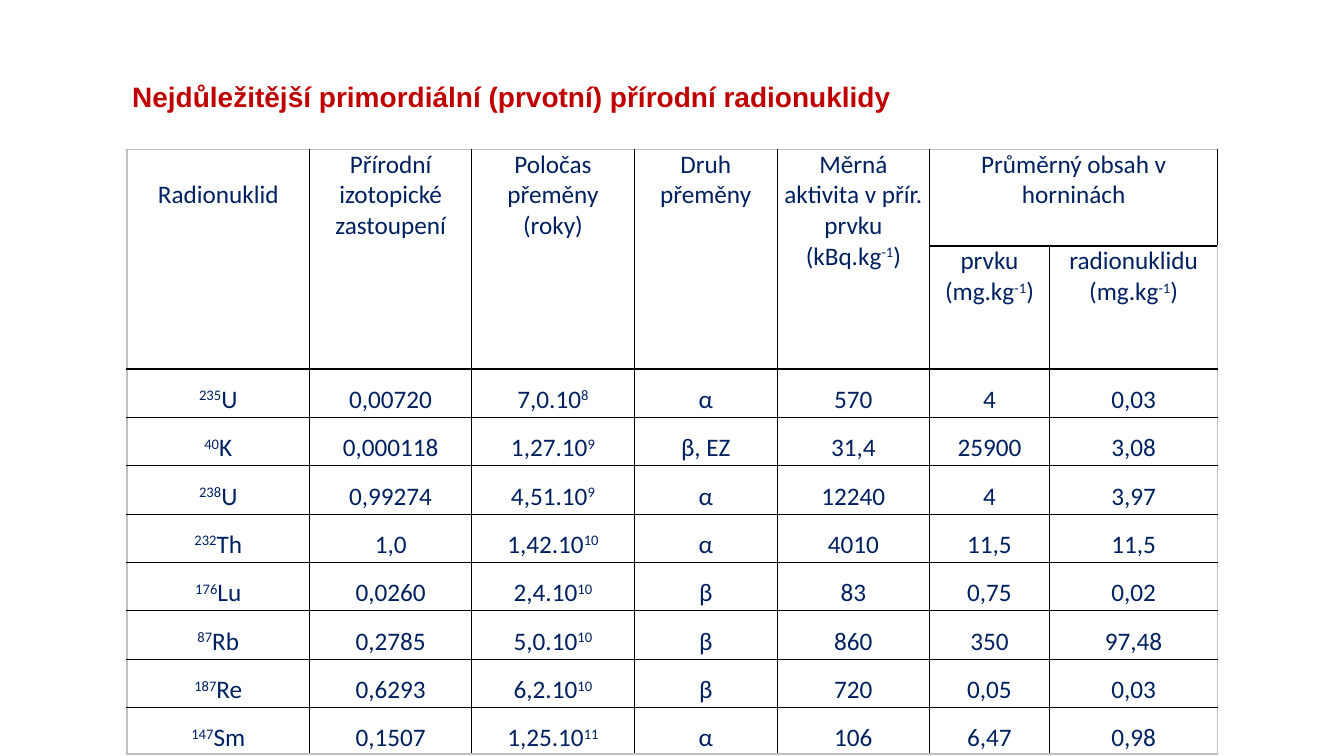
from typing import NamedTuple

from lxml import etree
from pptx import Presentation, util as u
from pptx.dml.color import RGBColor
from pptx.enum import text
from pptx.oxml.ns import qn

COLORS = {"title": "C00000", "body": "002060", "grid": "000000", "frame": "C0C0C0"}
COL_WIDTHS = [1.81, 1.61, 1.61, 1.42, 1.51, 1.19, 1.67]
ROW_HEIGHTS = [0.96, 0.64] + [0.48] * 7 + [0.46]


class Header(NamedTuple):
    row: int
    col: int
    label: str
    rows: int = 1
    cols: int = 1
    top: float = 0


class Nuclide(NamedTuple):
    symbol: str
    abundance: str
    half_life: str
    decay: str
    activity: str
    element: str
    nuclide: str


# Text between bars is superscript
HEADERS = [
    Header(0, 0, "Radionuklid", rows=2, top=0.3),
    Header(0, 1, "Přírodní izotopické zastoupení", rows=2),
    Header(0, 2, "Poločas přeměny (roky)", rows=2),
    Header(0, 3, "Druh přeměny", rows=2),
    Header(0, 4, "Měrná aktivita v přír. prvku (kBq.kg|-1|)", rows=2),
    Header(0, 5, "Průměrný obsah v horninách", cols=2),
    Header(1, 5, "prvku (mg.kg|-1|)"),
    Header(1, 6, "radionuklidu (mg.kg|-1|)"),
]
NUCLIDES = [
    Nuclide("|235|U", "0,00720", "7,0.10|8|", "α", "570", "4", "0,03"),
    Nuclide("|40|K", "0,000118", "1,27.10|9|", "β, EZ", "31,4", "25900", "3,08"),
    Nuclide("|238|U", "0,99274", "4,51.10|9|", "α", "12240", "4", "3,97"),
    Nuclide("|232|Th", "1,0", "1,42.10|10|", "α", "4010", "11,5", "11,5"),
    Nuclide("|176|Lu", "0,0260", "2,4.10|10|", "β", "83", "0,75", "0,02"),
    Nuclide("|87|Rb", "0,2785", "5,0.10|10|", "β", "860", "350", "97,48"),
    Nuclide("|187|Re", "0,6293", "6,2.10|10|", "β", "720", "0,05", "0,03"),
    Nuclide("|147|Sm", "0,1507", "1,25.10|11|", "α", "106", "6,47", "0,98"),
]


def write(tf, content: str, *, font: str = "Calibri", size: float = 18,
          color: str = "body", bold: bool = False, spacing: float = 1.0,
          align=text.PP_ALIGN.CENTER) -> None:
    """Fill the first paragraph, raising the parts between bars."""
    p = tf.paragraphs[0]
    p.alignment, p.line_spacing = align, spacing
    for i, part in enumerate(content.split("|")):
        if not part:
            continue
        r = p.add_run()
        r.text = part
        r.font.name, r.font.size, r.font.bold = font, u.Pt(size), bold
        r.font.color.rgb = RGBColor.from_string(COLORS[color])
        if i % 2:
            r._r.get_or_add_rPr().set("baseline", "30000")


def format_cell(cell, row: int, col: int) -> None:
    """Set borders, insets and an empty fill."""
    on_frame = {"L": col == 0, "R": col == len(COL_WIDTHS) - 1,
                "T": row == 0, "B": row == len(ROW_HEIGHTS) - 1}
    tc_pr = cell._tc.get_or_add_tcPr()
    for side, outer in on_frame.items():
        ln = etree.SubElement(tc_pr, qn(f"a:ln{side}"), w=str(u.Pt(1)))
        fill = etree.SubElement(ln, qn("a:solidFill"))
        etree.SubElement(fill, qn("a:srgbClr"), val=COLORS["frame" if outer else "grid"])
    cell.fill.background()
    cell.margin_left = cell.margin_right = u.Inches(0.07)
    cell.margin_top = cell.margin_bottom = 0


def add_title(s, content: str) -> None:
    sp = s.shapes.title
    sp.left, sp.top = u.Inches(1.21), u.Inches(0.66)
    sp.width, sp.height = u.Inches(11.84), u.Inches(0.6)
    tf = sp.text_frame
    tf.word_wrap = True
    tf.vertical_anchor = text.MSO_ANCHOR.MIDDLE
    write(tf, content, font="Arial", size=20, color="title", bold=True,
          align=text.PP_ALIGN.LEFT)


def add_nuclide_table(s) -> None:
    table = s.shapes.add_table(
        len(ROW_HEIGHTS), len(COL_WIDTHS), u.Inches(1.26), u.Inches(1.48),
        u.Inches(sum(COL_WIDTHS)), u.Inches(sum(ROW_HEIGHTS))).table
    table.first_row = table.horz_banding = False
    for column, width in zip(table.columns, COL_WIDTHS):
        column.width = u.Inches(width)
    for row, height in enumerate(ROW_HEIGHTS):
        table.rows[row].height = u.Inches(height)
        for col in range(len(COL_WIDTHS)):
            format_cell(table.cell(row, col), row, col)

    # Header cells, some of them merged
    for h in HEADERS:
        cell = table.cell(h.row, h.col)
        if h.rows * h.cols > 1:
            cell.merge(table.cell(h.row + h.rows - 1, h.col + h.cols - 1))
        cell.margin_top = u.Inches(h.top)
        write(cell.text_frame, h.label)

    # One row per radionuclide
    for row, nuclide in enumerate(NUCLIDES, start=2):
        for col, value in enumerate(nuclide):
            write(table.cell(row, col).text_frame, value, spacing=1.5)


def main() -> None:
    prs = Presentation()
    prs.slide_width, prs.slide_height = u.Inches(13.33), u.Inches(7.5)
    s = prs.slides.add_slide(prs.slide_layouts[5])
    add_title(s, "Nejdůležitější primordiální (prvotní) přírodní radionuklidy")
    add_nuclide_table(s)
    prs.save("out.pptx")


if __name__ == "__main__":
    main()
